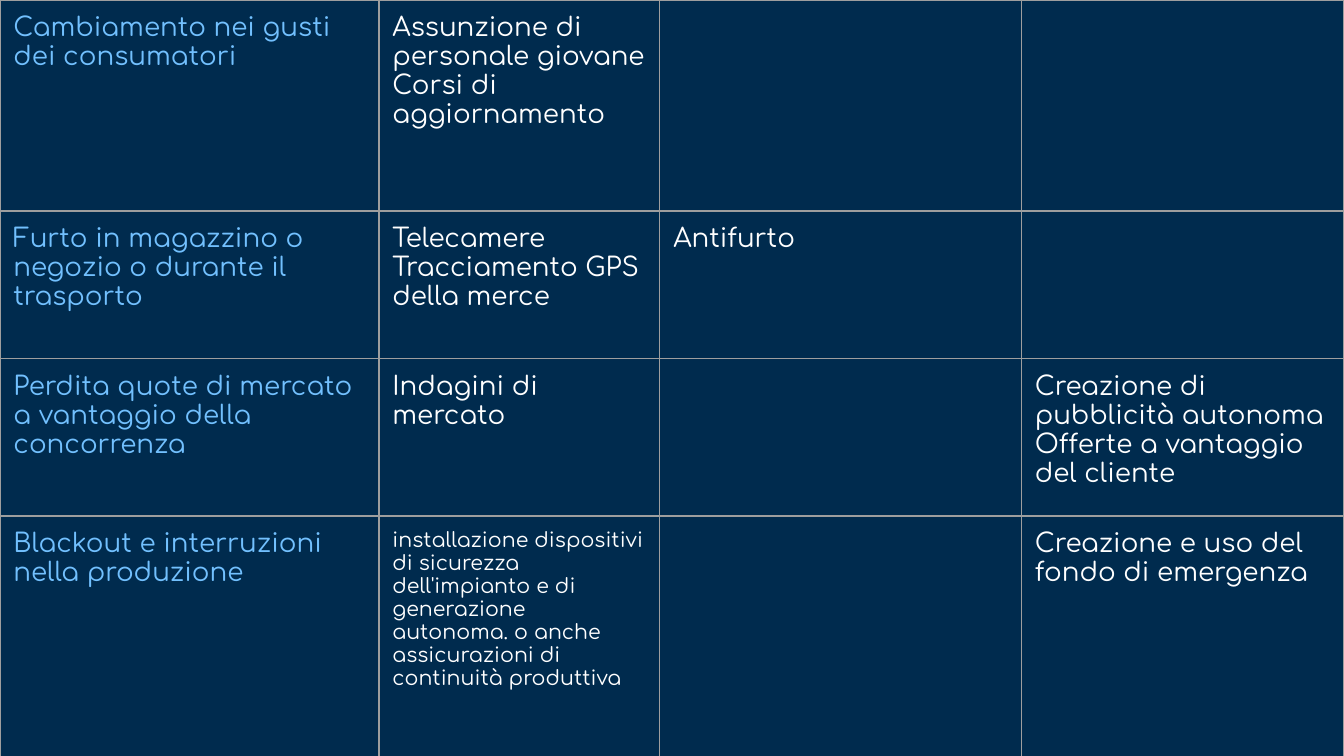
from dataclasses import dataclass

from lxml import etree
from pptx import Presentation
from pptx.dml.color import RGBColor
from pptx.enum.text import MSO_ANCHOR
from pptx.oxml.ns import qn
from pptx.table import _Cell
from pptx.util import Inches, Pt

TOP = MSO_ANCHOR.TOP

FONT = "Comfortaa"
NAVY, SKY, WHITE, GREY = "002B4E", "72C0FE", "FFFFFF", "9E9E9E"
COL_WIDTHS = (2.82, 2.09, 2.69, 2.4)
ROW_HEIGHTS = (1.57, 1.1, 1.17, 1.79)
MARGIN = Inches(0.1)


@dataclass
class Entry:
    text: str = ""
    size: float = 14


EMPTY = Entry()
RISK_ROWS = [
    [
        Entry("Cambiamento nei gusti dei consumatori"),
        Entry("Assunzione di personale giovane\nCorsi di aggiornamento"),
        EMPTY,
        EMPTY,
    ],
    [
        Entry("Furto in magazzino o negozio o durante il trasporto"),
        Entry("Telecamere\nTracciamento GPS della merce"),
        Entry("Antifurto"),
        EMPTY,
    ],
    [
        Entry("Perdita quote di mercato a vantaggio della concorrenza"),
        Entry("Indagini di mercato"),
        EMPTY,
        Entry("Creazione di pubblicità autonoma\nOfferte a vantaggio del cliente"),
    ],
    [
        Entry("Blackout e interruzioni nella produzione"),
        Entry(
            "installazione dispositivi di sicurezza dell'impianto e di generazione "
            "autonoma. o anche assicurazioni di continuità produttiva",
            size=11,
        ),
        EMPTY,
        Entry("Creazione e uso del fondo di emergenza"),
    ],
]


def rgb(color: str) -> RGBColor:
    return RGBColor.from_string(color)


def set_borders(cell: _Cell, color: str, width: float) -> None:
    tc_pr = cell._tc.get_or_add_tcPr()
    for side in ("a:lnL", "a:lnR", "a:lnT", "a:lnB"):
        ln = etree.SubElement(tc_pr, qn(side), w=str(Pt(width)))
        fill = etree.SubElement(ln, qn("a:solidFill"))
        etree.SubElement(fill, qn("a:srgbClr"), val=color)


def fill_cell(cell: _Cell, entry: Entry, color: str) -> None:
    set_borders(cell, GREY, 0.75)
    cell.fill.background()
    cell.vertical_anchor = TOP
    cell.margin_left = cell.margin_right = MARGIN
    cell.margin_top = cell.margin_bottom = MARGIN
    tf = cell.text_frame
    tf.text = entry.text
    for p in tf.paragraphs:
        p.font.name = FONT
        p.font.size = Pt(entry.size)
        p.font.color.rgb = rgb(color)


def main() -> None:
    prs = Presentation()
    prs.slide_width, prs.slide_height = Inches(10), Inches(5.625)
    s = prs.slides.add_slide(prs.slide_layouts[6])
    s.background.fill.solid()
    s.background.fill.fore_color.rgb = rgb(NAVY)

    table = s.shapes.add_table(
        len(ROW_HEIGHTS), len(COL_WIDTHS), 0, 0, prs.slide_width, prs.slide_height
    ).table
    table.first_row = table.horz_banding = False
    for column, width in zip(table.columns, COL_WIDTHS):
        column.width = Inches(width)
    for row, height, entries in zip(table.rows, ROW_HEIGHTS, RISK_ROWS):
        row.height = Inches(height)
        for i, (cell, entry) in enumerate(zip(row.cells, entries)):
            fill_cell(cell, entry, SKY if i == 0 else WHITE)

    prs.save("out.pptx")


if __name__ == "__main__":
    main()
